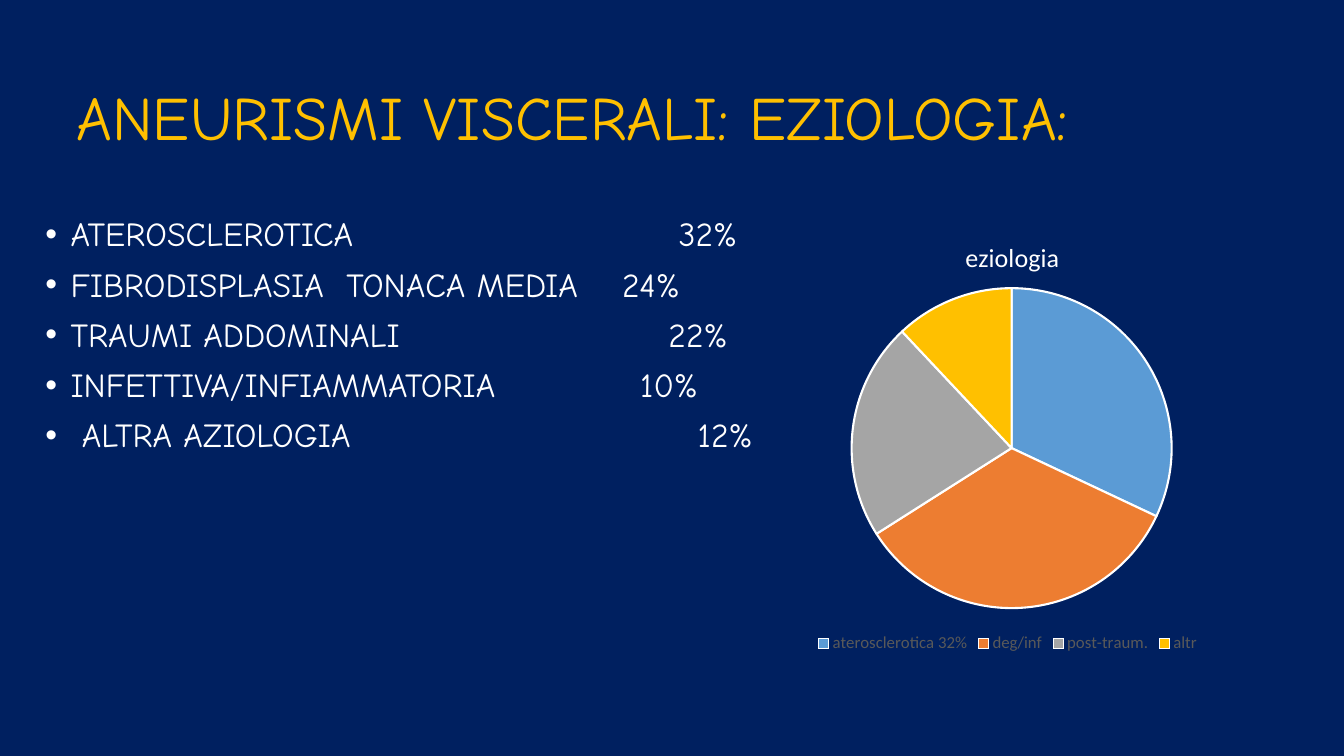
from lxml import etree
from pptx import Presentation
from pptx.chart.data import CategoryChartData
from pptx.dml.color import RGBColor
from pptx.enum import chart as ch, text as tx
from pptx.oxml import parse_xml
from pptx.oxml.ns import nsdecls, qn
from pptx.util import Inches, Pt

COLORS = {"back": "002060", "title": "FFC000", "text": "FFFFFF", "legend": "595959"}
SLICES = [
    ("aterosclerotica 32%", 32, "5B9BD5"),
    ("deg/inf", 34, "ED7D31"),
    ("post-traum.", 22, "A5A5A5"),
    ("altr", 12, "FFC000"),
]
# Cause, share, tab stop in inches
CAUSES = [
    ("ATEROSCLEROTICA", "32%", 6.28),
    ("FIBRODISPLASIA  TONACA MEDIA", "24%", 5.72),
    ("TRAUMI ADDOMINALI", "22%", 6.18),
    ("INFETTIVA/INFIAMMATORIA", "10%", 5.9),
    (" ALTRA AZIOLOGIA", "12%", 6.47),
]


def color(name):
    return RGBColor.from_string(COLORS[name])


def style(font, size, name, face):
    font.size, font.name, font.bold = Pt(size), face, False
    font.color.rgb = color(name)


def place(shape, left, top, width, height):
    shape.left, shape.top = Inches(left), Inches(top)
    shape.width, shape.height = Inches(width), Inches(height)


def add_run(para, words, size, name):
    run = para.add_run()
    run.text = words
    style(run.font, size, name, "Comic Neue")


def add_title(slide, words):
    title = slide.shapes.title
    place(title, 0.66, 0.47, 11.97, 1.45)
    frame = title.text_frame
    frame.auto_size = tx.MSO_AUTO_SIZE.NONE
    frame.vertical_anchor = tx.MSO_ANCHOR.MIDDLE
    para = frame.paragraphs[0]
    para.alignment, para.line_spacing = tx.PP_ALIGN.LEFT, 0.9
    add_run(para, words, 44, "title")


def set_tab(para, stop):
    props = para._p.get_or_add_pPr()
    props.set("marL", str(Inches(0.25)))
    props.set("indent", str(-Inches(0.25)))
    tabs = etree.SubElement(props, qn("a:tabLst"))
    etree.SubElement(tabs, qn("a:tab"), pos=str(Inches(stop)), algn="l")


def add_list(slide):
    body = slide.placeholders[1]
    place(body, 0.35, 2.11, 11.5, 4.76)
    frame = body.text_frame
    frame.auto_size = tx.MSO_AUTO_SIZE.NONE
    for row, (cause, share, stop) in enumerate(CAUSES):
        para = frame.add_paragraph() if row else frame.paragraphs[0]
        para.line_spacing, para.space_before = 0.9, Pt(10)
        set_tab(para, stop)
        add_run(para, f"{cause}\t{share}", 24, "text")


def set_layout(part, target, **sizes):
    """Fix a chart part at fractions of the chart's size."""
    old = part.find(qn("c:layout"))
    if old is not None:
        part.remove(old)
    inner = '<c:layoutTarget val="inner"/>' if target else ""
    modes = '<c:xMode val="edge"/><c:yMode val="edge"/>'
    vals = "".join(f'<c:{key} val="{val}"/>' for key, val in sizes.items())
    layout = parse_xml(
        f'<c:layout {nsdecls("c")}><c:manualLayout>{inner}{modes}{vals}'
        "</c:manualLayout></c:layout>"
    )
    text = part.find(qn("c:tx"))
    part.insert(0 if text is None else part.index(text) + 1, layout)


def add_pie(slide):
    data = CategoryChartData()
    data.categories = [label for label, _, _ in SLICES]
    data.add_series("Series 1", [val for _, val, _ in SLICES])
    box = [Inches(n) for n in (6.1, 2.11, 7.79, 4.41)]
    chart = slide.shapes.add_chart(ch.XL_CHART_TYPE.PIE, *box, data).chart
    chart.font.size, chart.font.name = Pt(10), "Calibri"

    chart.has_title = True
    run = chart.chart_title.text_frame.paragraphs[0].add_run()
    run.text = "eziologia"
    style(run.font, 18.6, "text", "Calibri")
    set_layout(chart.chart_title._element, False, x=0.44, y=0.05)

    chart.has_legend = True
    legend = chart.legend
    legend.position = ch.XL_LEGEND_POSITION.BOTTOM
    legend.include_in_layout = False
    style(legend.font, 12, "legend", "Calibri")

    plot = chart.plots[0]
    plot.vary_by_categories = True
    area = chart._chartSpace.chart.plotArea
    set_layout(area, True, x=0.3, y=0.17, w=0.41, h=0.72)
    for spot, (_, _, fill) in enumerate(SLICES):
        form = plot.series[0].points[spot].format
        form.fill.solid()
        form.fill.fore_color.rgb = RGBColor.from_string(fill)
        form.line.color.rgb = color("text")
        form.line.width = Pt(1.5)


def main():
    prs = Presentation()
    prs.slide_width, prs.slide_height = Inches(13.33), Inches(7.5)
    slide = prs.slides.add_slide(prs.slide_layouts[1])
    slide.background.fill.solid()
    slide.background.fill.fore_color.rgb = color("back")
    add_title(slide, "ANEURISMI VISCERALI: EZIOLOGIA:")
    add_list(slide)
    add_pie(slide)
    prs.save("out.pptx")


if __name__ == "__main__":
    main()
